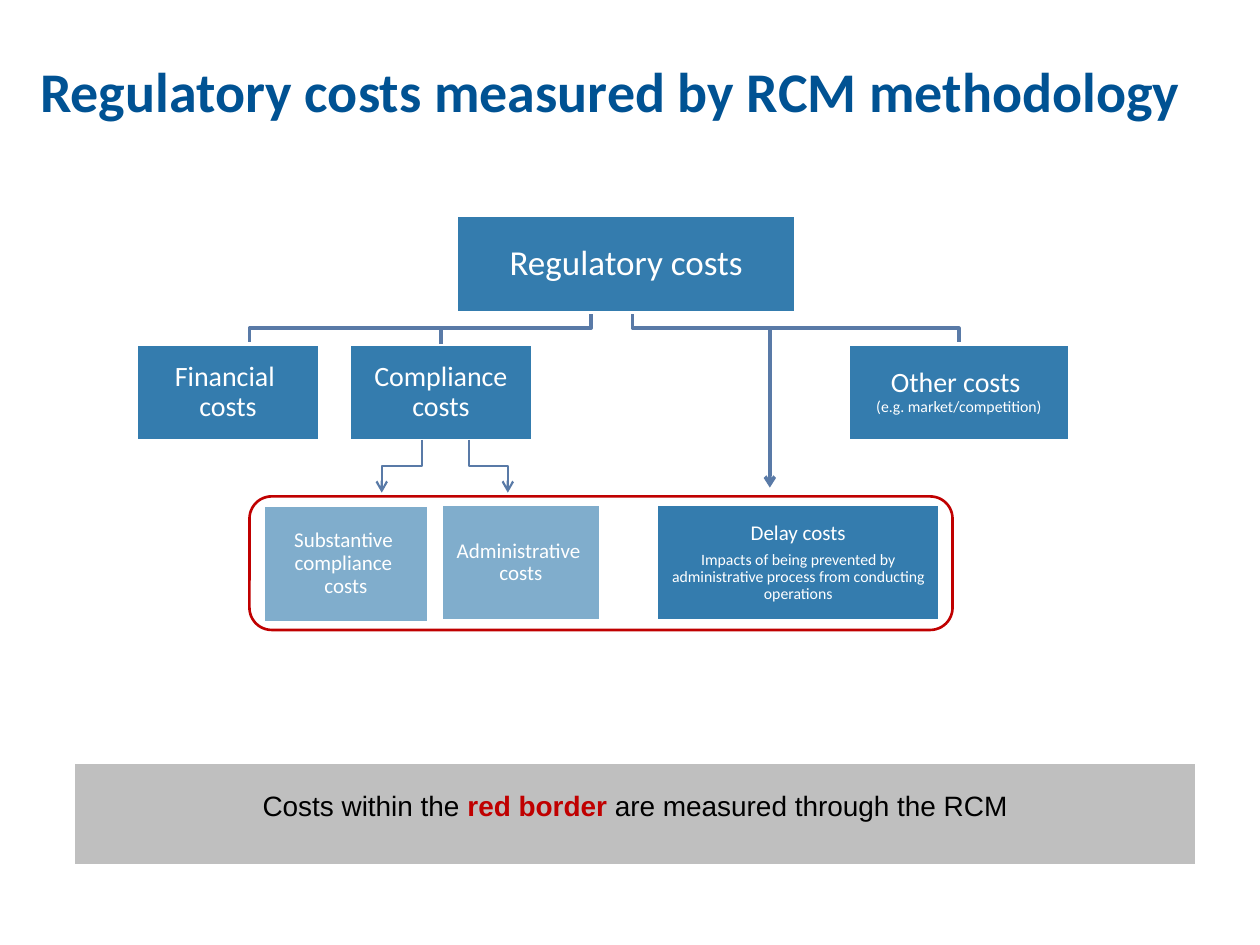
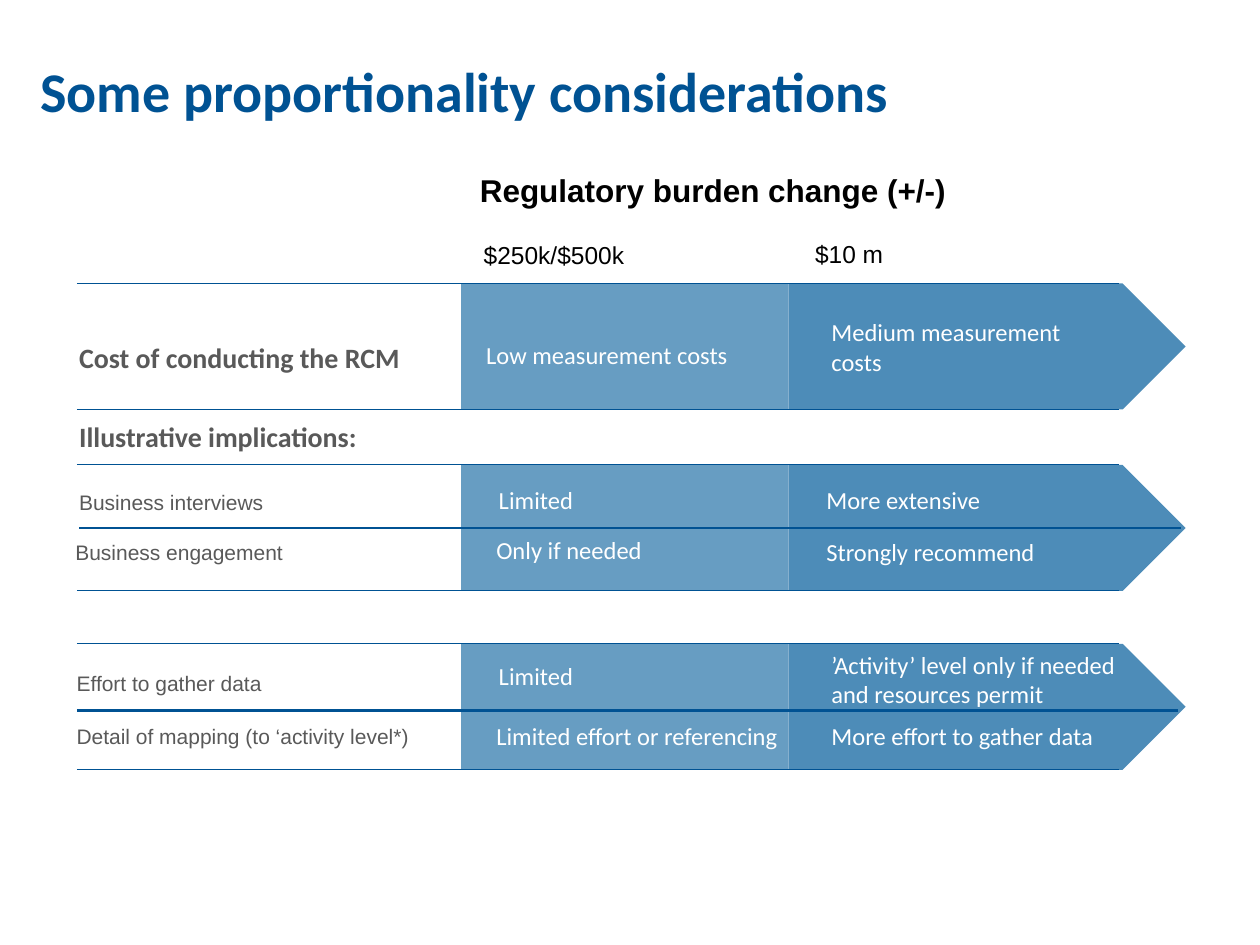
from lxml import etree
from pptx import Presentation
from pptx.dml.color import RGBColor
from pptx.enum.shapes import MSO_CONNECTOR as CONN, MSO_SHAPE as SHAPE
from pptx.enum.text import MSO_ANCHOR as ANCHOR, PP_ALIGN as ALIGN
from pptx.oxml.ns import qn
from pptx.util import Inches, Pt

NAVY = RGBColor(0x00, 0x52, 0x93)
BLUE = RGBColor(0x34, 0x7C, 0xAE)
PALE_BLUE = RGBColor(0x80, 0xAD, 0xCC)
BAND_LOW = RGBColor(0x67, 0x9D, 0xC2)
BAND_MEDIUM = RGBColor(0x4D, 0x8C, 0xB8)
LINK = RGBColor(0x59, 0x7A, 0xA7)
RED = RGBColor(0xC0, 0x00, 0x00)
SILVER = RGBColor(0xBF, 0xBF, 0xBF)
GREY = RGBColor(0x59, 0x59, 0x59)
BLACK = RGBColor(0x00, 0x00, 0x00)
WHITE = RGBColor(0xFF, 0xFF, 0xFF)
HEAD, BODY = "Calibri", "Arial"


class Deck:
    """Builds slides in one style and keeps track of the current slide."""

    def __init__(self):
        self.prs = Presentation()
        self.prs.slide_width = Inches(10)
        self.prs.slide_height = Inches(7.5)
        self.shapes = None

    def slide(self, title):
        s = self.prs.slides.add_slide(self.prs.slide_layouts[6])
        self.shapes = s.shapes
        tb = self.text(0.22, 0.4, 9.47, title, 32, NAVY, bold=True, height=0.63)
        tb.text_frame.vertical_anchor = ANCHOR.MIDDLE

    def style(self, p, size, color, font=HEAD, bold=False):
        for r in p.runs:
            r.font.name, r.font.size, r.font.bold = font, Pt(size), bold
            r.font.color.rgb = color

    def text(self, x, y, width, text, size, color, font=HEAD, bold=False,
             height=0.34, gap=0):
        tb = self.shapes.add_textbox(*map(Inches, (x, y, width, height)))
        tb.text_frame.word_wrap = True
        tb.text_frame.text = text
        for i, p in enumerate(tb.text_frame.paragraphs):
            p.space_before = Pt(gap if i else 0)
            self.style(p, size, color, font, bold)
        return tb

    def shape(self, kind, x, y, width, height, fill=None, line=None, weight=2):
        sp = self.shapes.add_shape(kind, *map(Inches, (x, y, width, height)))
        sp.shadow.inherit = False
        if fill is None:
            sp.fill.background()
        else:
            sp.fill.solid()
            sp.fill.fore_color.rgb = fill
        if line is None:
            sp.line.fill.background()
        else:
            sp.line.color.rgb = line
            sp.line.width = Pt(weight)
        return sp

    def box(self, x, y, width, height, *lines, fill=BLUE, gap=4):
        sp = self.shape(SHAPE.RECTANGLE, x, y, width, height, fill, WHITE)
        tf = sp.text_frame
        tf.word_wrap = True
        tf.vertical_anchor = ANCHOR.MIDDLE
        tf.margin_left = tf.margin_right = Inches(0.01)
        tf.margin_top = tf.margin_bottom = Inches(0.01)
        tf.text = "\n".join(text for text, size in lines)
        for i, (p, (text, size)) in enumerate(zip(tf.paragraphs, lines)):
            p.alignment = ALIGN.CENTER
            p.line_spacing = 0.9
            p.space_before = Pt(gap if i else 0)
            self.style(p, size, WHITE)
        return sp

    def line(self, x1, y1, x2, y2, color=LINK, weight=2.0, arrow=False,
             kind=CONN.STRAIGHT):
        c = self.shapes.add_connector(kind, *map(Inches, (x1, y1, x2, y2)))
        c.line.color.rgb = color
        c.line.width = Pt(weight)
        if arrow:
            ln = c.line._get_or_add_ln()
            etree.SubElement(ln, qn("a:tailEnd"), type="arrow")
        etree.SubElement(c.element.spPr, qn("a:effectLst"))
        return c

    def elbow(self, x1, y1, x2, y2, **style):
        """Draw a bent connector that leaves and arrives vertically."""
        rightward = x2 > x1
        half_w, half_h = (y2 - y1) / 2, abs(x2 - x1) / 2
        cx, cy = (x1 + x2) / 2, (y1 + y2) / 2
        dx = half_w if rightward else -half_w
        c = self.line(cx + dx, cy - half_h, cx - dx, cy + half_h,
                      kind=CONN.ELBOW, **style)
        degrees = 270 if rightward else 90
        c.element.spPr.find(qn("a:xfrm")).set("rot", str(degrees * 60000))

    def banner(self, x, y, width, height, runs):
        frame = self.shapes.add_table(1, 1, *map(Inches, (x, y, width, height)))
        frame.table.horz_banding = False
        cell = frame.table.cell(0, 0)
        cell.fill.solid()
        cell.fill.fore_color.rgb = SILVER
        cell.margin_top = Inches(0.22)
        p = cell.text_frame.paragraphs[0]
        p.alignment = ALIGN.CENTER
        for text, color, bold in runs:
            r = p.add_run()
            r.text = text
            r.font.name, r.font.size, r.font.bold = BODY, Pt(16), bold
            r.font.color.rgb = color


def cost_tree(deck):
    deck.slide("Regulatory costs measured by RCM methodology")
    deck.banner(0.59, 6.06, 8.9, 0.8, [
        ("Costs within the ", BLACK, False),
        ("red border ", RED, True),
        ("are measured through the RCM", BLACK, False)])
    compliance = deck.box(2.77, 2.73, 1.46, 0.77, ("Compliance costs", 16))
    for start, end in ((3.72, 4.03), (3.35, 3.03)):
        deck.elbow(start, 3.49, end, 3.91, weight=1.25, arrow=True)
    for start, end in ((5.02, 7.61), (4.69, 1.98)):
        deck.elbow(start, 2.47, end, 2.74)
    deck.box(3.62, 1.71, 2.7, 0.77, ("Regulatory costs", 20))
    deck.box(1.08, 2.73, 1.46, 0.77, ("Financial \vcosts", 16))
    deck.box(3.5, 4, 1.27, 0.93, ("Administrative \vcosts", 12), fill=PALE_BLUE)
    deck.box(2.09, 4.01, 1.31, 0.93, ("Substantive \vcompliance \vcosts", 12),
             fill=PALE_BLUE)
    deck.box(5.21, 4, 2.25, 0.93, ("Delay costs", 12),
             ("Impacts of being prevented by administrative process "
              "from conducting operations", 9))
    deck.box(6.73, 2.73, 1.76, 0.77, ("Other costs ", 16),
             ("(e.g. market/competition)", 9), gap=0)
    deck.shape(SHAPE.ROUNDED_RECTANGLE, 1.98, 3.94, 5.58, 1.06,
               line=RED, weight=1.5)
    deck.line(6.11, 2.6, 6.11, 3.87, arrow=True)
    deck.line(3.5, 2.6, 3.5, 2.73).end_connect(compliance, 0)


def proportionality(deck):
    deck.slide("Some proportionality considerations")
    band_tops = (2.25, 3.69, 5.11)
    for top in band_tops:
        deck.shape(SHAPE.PENTAGON, 6.26, top, 3.15, 1, BAND_MEDIUM)
        deck.shape(SHAPE.RECTANGLE, 3.66, top, 2.6, 1, BAND_LOW)

    deck.text(0.53, 2.65, 3.31,
              "Cost of conducting the RCM\nIllustrative implications:",
              16, GREY, bold=True, height=1.01, gap=26)
    for x, y, width, label in (
            (3.76, 2.65, 2.28, "Low measurement costs"),
            (6.5, 2.47, 2.28, "Medium measurement costs"),
            (3.86, 3.8, 2.28, "Limited"),
            (3.84, 4.2, 2.28, "Only if needed"),
            (3.84, 5.67, 2.48, "Limited effort or referencing"),
            (3.86, 5.2, 2.28, "Limited"),
            (6.46, 3.8, 2.28, "More extensive"),
            (6.46, 4.21, 2.28, "Strongly recommend"),
            (6.5, 5.11, 2.6, "’Activity’ level only if needed and resources permit"),
            (6.5, 5.67, 2.28, "More effort to gather data")):
        deck.text(x, y, width, label, 14, WHITE)

    for x, y in ((0.63, 4.19), (0.61, 5.64)):
        deck.line(x, y, x + 8.74, y, NAVY, 1.5)
    for x, y, label in (
            (0.51, 5.69, "Detail of mapping (to ‘activity level*)"),
            (0.51, 5.27, "Effort to gather data"),
            (0.53, 3.84, "Business interviews"),
            (0.5, 4.23, "Business engagement")):
        deck.text(x, y, 3.23, label, 12, GREY, BODY, height=0.3)
    deck.text(3.74, 1.86, 2.59, "$250k/$500k", 14, BLACK, BODY)
    deck.text(6.37, 1.85, 2.59, "$10 m", 14, BLACK, BODY)
    deck.text(3.71, 1.31, 4.13, "Regulatory burden change (+/-)", 18, BLACK,
              BODY, bold=True, height=0.4)

    for top in band_tops:
        for y in (top, top + 1):
            deck.line(0.61, y, 8.88, y, NAVY, 0.5)


def main():
    deck = Deck()
    cost_tree(deck)
    proportionality(deck)
    deck.prs.save("out.pptx")


if __name__ == "__main__":
    main()
